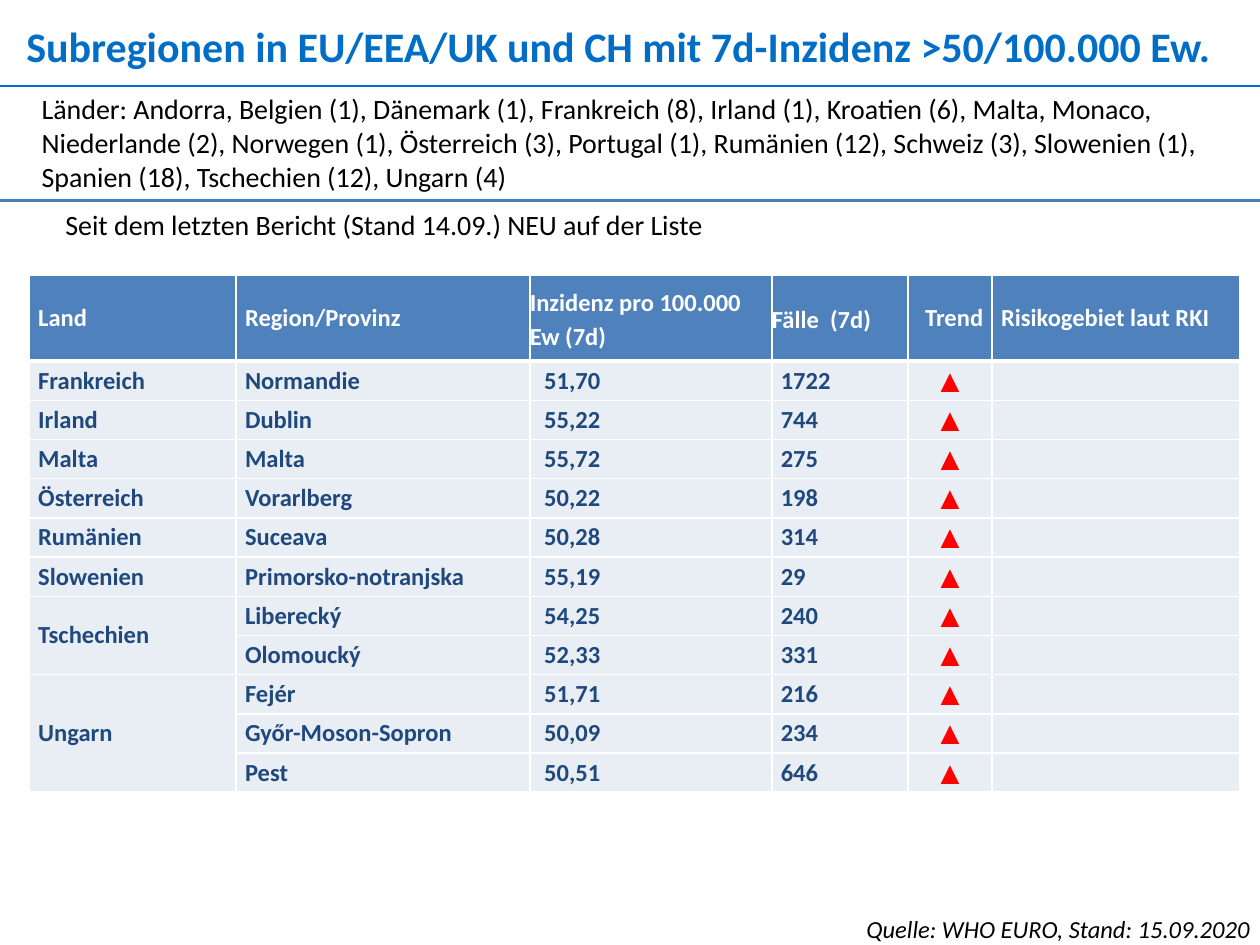
import dataclasses

import lxml.etree
import pptx
import pptx.dml.color
import pptx.enum.shapes
import pptx.enum.text
import pptx.oxml.ns
import pptx.util

Cm = pptx.util.Cm
Pt = pptx.util.Pt
Align = pptx.enum.text.PP_ALIGN
Anchor = pptx.enum.text.MSO_ANCHOR


@dataclasses.dataclass(frozen=True)
class Theme:
    font: str = "Calibri"
    title_blue: str = "006EC7"
    rule_blue: str = "4B7EBC"
    header_fill: str = "4F81BD"
    body_fill: str = "E9EDF4"
    body_text: str = "1F497D"
    trend_red: str = "FF0000"
    white: str = "FFFFFF"
    black: str = "000000"
    title_size: int = 24
    text_size: int = 16
    small_size: int = 14


def rgb(color):
    return pptx.dml.color.RGBColor.from_string(color)


class SlideBuilder:
    def __init__(self, slide, theme):
        self.slide = slide
        self.theme = theme

    def add_run(self, paragraph, text, size, color, bold=False, italic=False):
        run = paragraph.add_run()
        run.text = text
        font = run.font
        font.name, font.size = self.theme.font, Pt(size)
        font.bold, font.italic = bold, italic
        font.color.rgb = rgb(color)

    def title(self, text, left, top, width, height):
        shape = self.slide.shapes.title
        shape.left, shape.top, shape.width, shape.height = map(Cm, (left, top, width, height))
        frame = shape.text_frame
        frame.margin_left = frame.margin_right = frame.margin_top = frame.margin_bottom = 0
        frame.vertical_anchor = Anchor.TOP
        frame.auto_size = pptx.enum.text.MSO_AUTO_SIZE.NONE
        paragraph = frame.paragraphs[0]
        paragraph.alignment = Align.LEFT
        self.add_run(paragraph, text, self.theme.title_size, self.theme.title_blue, bold=True)

    def text(self, text, left, top, width, height, size, align=Align.LEFT, italic=False):
        box = self.slide.shapes.add_textbox(Cm(left), Cm(top), Cm(width), Cm(height))
        box.text_frame.word_wrap = True
        paragraph = box.text_frame.paragraphs[0]
        paragraph.alignment = align
        self.add_run(paragraph, text, size, self.theme.black, italic=italic)

    def rule(self, left, right, height, color, weight):
        line = self.slide.shapes.add_connector(
            pptx.enum.shapes.MSO_CONNECTOR.STRAIGHT, Cm(left), Cm(height), Cm(right), Cm(height))
        line.line.color.rgb = rgb(color)
        line.line.width = Pt(weight)
        properties = line._element.spPr
        lxml.etree.SubElement(properties, pptx.oxml.ns.qn("a:effectLst"))

    def table(self, left, top, widths, heights):
        frame = self.slide.shapes.add_table(
            len(heights), len(widths), Cm(left), Cm(top), Cm(sum(widths)), Cm(sum(heights)))
        table = frame.table
        table.first_row = table.horz_banding = False
        for column, width in zip(table.columns, widths):
            column.width = Cm(width)
        for row, height in zip(table.rows, heights):
            row.height = Cm(height)
        return table

    def style_cell(self, cell, fill, top=1, bottom=1):
        cell.margin_left = cell.margin_right = cell.margin_top = cell.margin_bottom = 0
        cell.vertical_anchor = Anchor.MIDDLE
        properties = cell._tc.get_or_add_tcPr()
        for side, weight in (("L", 1), ("R", 1), ("T", top), ("B", bottom)):
            border = lxml.etree.SubElement(
                properties, pptx.oxml.ns.qn(f"a:ln{side}"), w=str(Pt(weight)))
            solid = lxml.etree.SubElement(border, pptx.oxml.ns.qn("a:solidFill"))
            lxml.etree.SubElement(solid, pptx.oxml.ns.qn("a:srgbClr"), val=self.theme.white)
        cell.fill.solid()
        cell.fill.fore_color.rgb = rgb(fill)

    def cell_text(self, cell, text, color, bold=True, align=Align.LEFT, indent=0.0, leading=None):
        paragraph = cell.text_frame.paragraphs[0]
        paragraph.alignment = align
        if leading:
            paragraph.line_spacing = leading
        if indent:
            paragraph.space_before = paragraph.space_after = Pt(2)
            properties = paragraph._p.get_or_add_pPr()
            properties.set("marL", str(Cm(indent)))
            properties.set("marR", str(Cm(0.18)))
            properties.set("indent", "0")
        self.add_run(paragraph, text, self.theme.small_size, color, bold=bold)


# Table content: country, then (region, incidence, cases) for each region
HEADERS = ["Land", "Region/Provinz", "Inzidenz pro 100.000 Ew (7d)", "Fälle  (7d)", "Trend",
           "Risikogebiet laut RKI"]
COUNTRIES = [
    ("Frankreich", [("Normandie", "51,70", "1722")]),
    ("Irland", [("Dublin", "55,22", "744")]),
    ("Malta", [("Malta", "55,72", "275")]),
    ("Österreich", [("Vorarlberg", "50,22", "198")]),
    ("Rumänien", [("Suceava", "50,28", "314")]),
    ("Slowenien", [("Primorsko-notranjska", "55,19", "29")]),
    ("Tschechien", [("Liberecký", "54,25", "240"), ("Olomoucký", "52,33", "331")]),
    ("Ungarn", [("Fejér", "51,71", "216"), ("Győr-Moson-Sopron", "50,09", "234"),
                ("Pest", "50,51", "646")]),
]
COLUMN_WIDTHS = [4.17, 5.92, 4.88, 2.74, 1.7, 5]
HEADER_HEIGHT, ROW_HEIGHT = 1.74, 0.79
INDENT, INCIDENCE_INDENT = 0.18, 0.29


def add_incidence_table(builder):
    theme = builder.theme
    region_count = sum(len(regions) for _, regions in COUNTRIES)
    table = builder.table(0.59, 5.54, COLUMN_WIDTHS, [HEADER_HEIGHT] + [ROW_HEIGHT] * region_count)

    # Header row, set off by a thick white line
    for column, header in enumerate(HEADERS):
        cell = table.cell(0, column)
        builder.style_cell(cell, theme.header_fill, bottom=3)
        flush = column in (2, 3)
        builder.cell_text(cell, header, theme.white,
                          align=Align.RIGHT if header == "Trend" else Align.LEFT,
                          indent=0 if flush else INDENT, leading=1.15 if flush else None)

    # One row per region, with the country cell spanning its regions
    row = 1
    for country, regions in COUNTRIES:
        first_row = row
        for region, incidence, cases in regions:
            for column in range(len(HEADERS)):
                builder.style_cell(table.cell(row, column), theme.body_fill,
                                   top=3 if row == 1 else 1)
            for column, text, indent in ((1, region, INDENT), (2, incidence, INCIDENCE_INDENT),
                                         (3, cases, INDENT)):
                builder.cell_text(table.cell(row, column), text, theme.body_text, indent=indent)
            builder.cell_text(table.cell(row, 4), "▲", theme.trend_red, bold=False,
                              align=Align.CENTER)
            row += 1
        country_cell = table.cell(first_row, 0)
        if len(regions) > 1:
            country_cell.merge(table.cell(row - 1, 0))
        builder.cell_text(country_cell, country, theme.body_text, indent=INDENT)


def main():
    presentation = pptx.Presentation()
    presentation.slide_width, presentation.slide_height = Cm(25.4), Cm(19.05)
    theme = Theme()
    builder = SlideBuilder(presentation.slides.add_slide(presentation.slide_layouts[5]), theme)

    # Title and rule
    builder.title("Subregionen in EU/EEA/UK und CH mit 7d-Inzidenz >50/100.000 Ew.",
                  0.53, 0.41, 24.46, 1.02)
    builder.rule(0, 25.4, 1.73, theme.title_blue, 1.5)

    # Source
    builder.text("Quelle: WHO EURO, Stand: 15.09.2020", 16.1, 18.31, 9.35, 0.86,
                 theme.small_size, Align.RIGHT, italic=True)

    # Country summary and subheading
    builder.text("Seit dem letzten Bericht (Stand 14.09.) NEU auf der Liste",
                 1.07, 4.06, 20.19, 0.94, theme.text_size)
    builder.text("Länder: Andorra, Belgien (1), Dänemark (1), Frankreich (8), Irland (1), "
                 "Kroatien (6), Malta, Monaco, Niederlande (2), Norwegen (1), Österreich (3), "
                 "Portugal (1), Rumänien (12), Schweiz (3), Slowenien (1), Spanien (18), "
                 "Tschechien (12), Ungarn (4)", 0.59, 1.73, 24.28, 2.31, theme.text_size)
    builder.rule(-0.05, 25.4, 4.04, theme.rule_blue, 1.75)

    # New regions
    add_incidence_table(builder)
    presentation.save("out.pptx")


if __name__ == "__main__":
    main()
